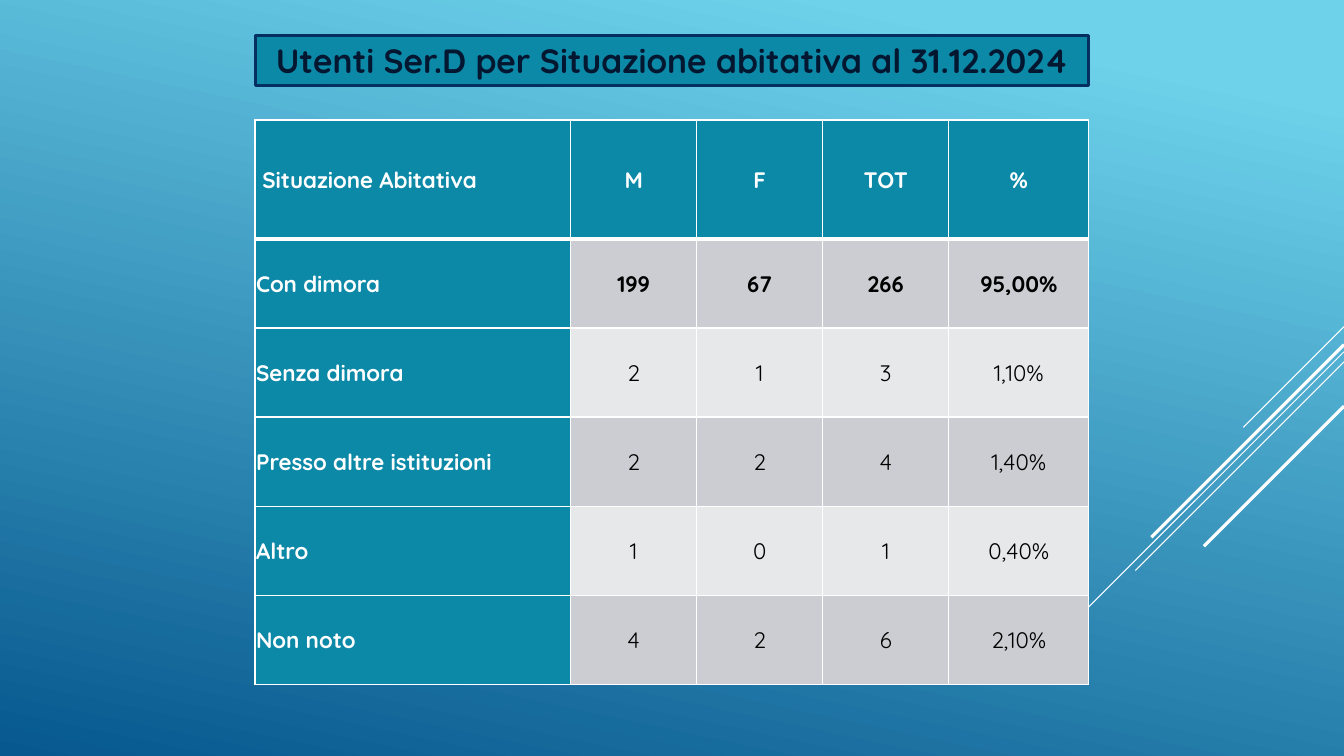
from lxml import etree
from pptx import Presentation
from pptx.dml.color import RGBColor
from pptx.enum import shapes, text
from pptx.oxml import ns
from pptx.util import Inches, Pt

FONT = "Quicksand"
WHITE, BLACK, TEAL = "FFFFFF", "000000", "0D89A8"
BANDS = ["CCCDD2", "E7E8EA"]

HEADINGS = [" Situazione Abitativa", "M", "F", "TOT", "%"]
HOUSING = [
    ["Con dimora", "199", "67", "266", "95,00%"],
    ["Senza dimora", "2", "1", "3", "1,10%"],
    ["Presso altre istituzioni", "2", "2", "4", "1,40%"],
    ["Altro", "1", "0", "1", "0,40%"],
    ["Non noto", "4", "2", "6", "2,10%"],
]
COLUMN_WIDTHS = [3.13, 1.25, 1.25, 1.25, 1.39]
TABLE_HEIGHT, HEADING_HEIGHT = 5.6, 1.18

# Diagonals run at 45 degrees from the right edge: top, length across, width
DIAGONALS = [
    (3.24, 1, 0.75),
    (3.49, 3.26, 0.75),
    (3.59, 2.07, 0.75),
    (3.42, 1.91, 2.25),
    (4.03, 1.39, 2.25),
]


def paint(color, value):
    color.rgb = RGBColor.from_string(value)


def fill_solid(fill, value):
    fill.solid()
    paint(fill.fore_color, value)


def write(frame, words, size=16, color=BLACK, bold=False,
          align=text.PP_ALIGN.CENTER):
    paragraph = frame.paragraphs[0]
    paragraph.alignment = align
    run = paragraph.add_run()
    run.text = words
    run.font.name = FONT
    run.font.size = Pt(size)
    run.font.bold = bold
    paint(run.font.color, color)


def set_background(slide):
    fill = slide.background.fill
    fill.gradient()
    fill.gradient_angle = 360 - 102
    stops = [(0.1, "6ED2EB"), (1, "06588E")]
    for stop, (position, color) in zip(fill.gradient_stops, stops):
        stop.position = position
        paint(stop.color, color)


def add_diagonal(slide, top, reach, width, right=13.33):
    diagonal = slide.shapes.add_connector(
        shapes.MSO_CONNECTOR.STRAIGHT, Inches(right), Inches(top),
        Inches(right - reach), Inches(top + reach))
    paint(diagonal.line.color, WHITE)
    diagonal.line.width = Pt(width)
    etree.SubElement(diagonal._element.spPr, ns.qn("a:effectLst"))


def add_title(slide, words):
    title = slide.shapes.title
    title.left, title.top = Inches(2.53), Inches(0.35)
    title.width, title.height = Inches(8.27), Inches(0.5)
    fill_solid(title.fill, TEAL)
    paint(title.line.color, "052F61")
    title.line.width = Pt(2.25)
    frame = title.text_frame
    frame.word_wrap = True
    frame.auto_size = text.MSO_AUTO_SIZE.NONE
    frame.vertical_anchor = text.MSO_ANCHOR.MIDDLE
    write(frame, words, size=24, color="031730", bold=True)


def set_borders(cell, bottom=1):
    properties = cell._tc.get_or_add_tcPr()
    for side, width in [("L", 1), ("R", 1), ("T", 1), ("B", bottom)]:
        border = etree.SubElement(properties, ns.qn(f"a:ln{side}"),
                                  w=str(Pt(width)))
        solid = etree.SubElement(border, ns.qn("a:solidFill"))
        etree.SubElement(solid, ns.qn("a:srgbClr"), val=WHITE)


def format_cell(cell, words, row, column):
    cell.margin_left = cell.margin_right = cell.margin_top = Inches(0.01)
    cell.margin_bottom = 0
    cell.vertical_anchor = text.MSO_ANCHOR.MIDDLE
    set_borders(cell, bottom=3 if row == 0 else 1)
    is_label = row == 0 or column == 0
    fill_solid(cell.fill, TEAL if is_label else BANDS[(row - 1) % 2])
    write(cell.text_frame, words,
          color=WHITE if is_label else BLACK,
          bold=is_label or row == 1,
          align=text.PP_ALIGN.CENTER if column else text.PP_ALIGN.LEFT)


def add_housing_table(slide):
    rows = [HEADINGS] + HOUSING
    table = slide.shapes.add_table(
        len(rows), len(HEADINGS), Inches(2.53), Inches(1.19),
        Inches(sum(COLUMN_WIDTHS)), Inches(TABLE_HEIGHT)).table
    for column, width in zip(table.columns, COLUMN_WIDTHS):
        column.width = Inches(width)
    body_height = (TABLE_HEIGHT - HEADING_HEIGHT) / len(HOUSING)
    for r, values in enumerate(rows):
        table.rows[r].height = Inches(body_height if r else HEADING_HEIGHT)
        for c, words in enumerate(values):
            format_cell(table.cell(r, c), words, r, c)


def main():
    deck = Presentation()
    deck.slide_width, deck.slide_height = Inches(13.33), Inches(7.5)
    slide = deck.slides.add_slide(deck.slide_layouts.get_by_name("Title Only"))

    # Backdrop
    set_background(slide)
    for top, reach, width in DIAGONALS:
        add_diagonal(slide, top, reach, width)

    # Content
    add_title(slide, "Utenti Ser.D per Situazione abitativa al 31.12.2024")
    add_housing_table(slide)
    deck.save("out.pptx")


if __name__ == "__main__":
    main()
